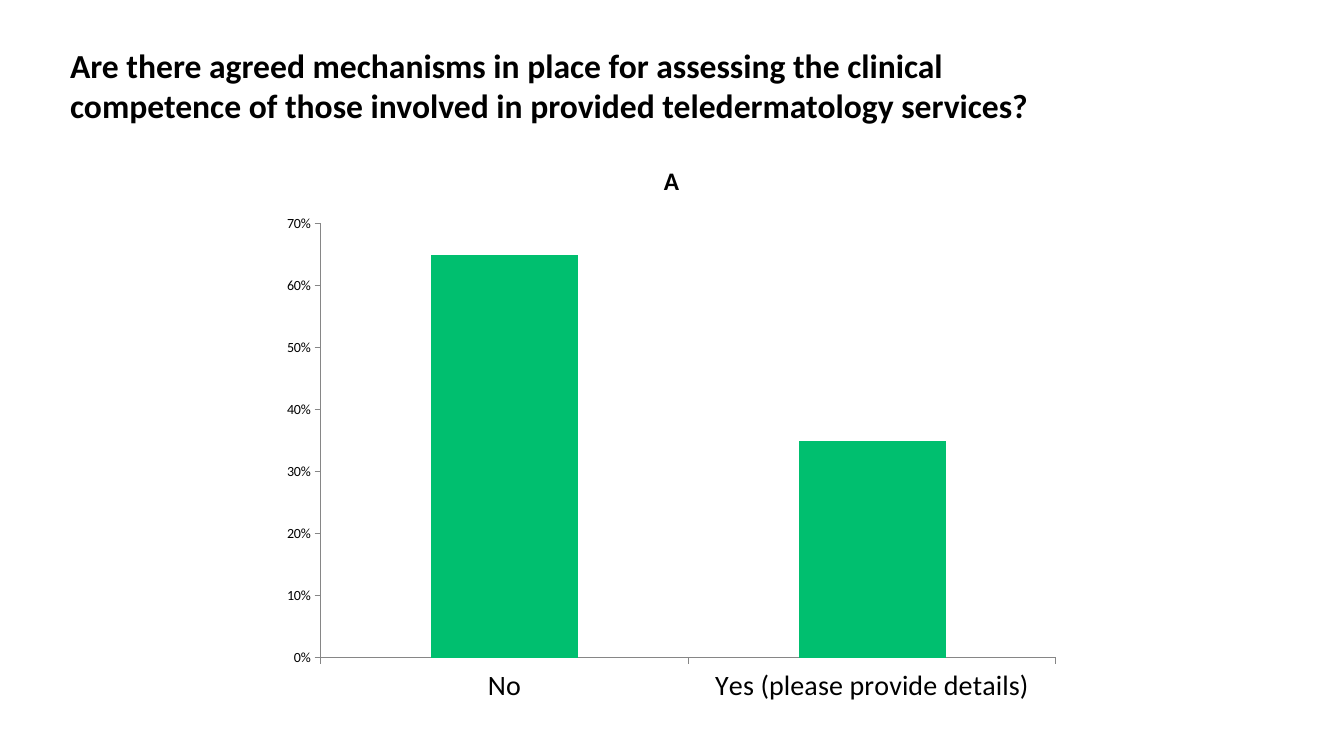
from dataclasses import dataclass

from pptx import Presentation
from pptx.chart.data import CategoryChartData
from pptx.dml.color import RGBColor
from pptx.enum.chart import XL_CHART_TYPE, XL_TICK_MARK
from pptx.enum.text import MSO_ANCHOR, MSO_AUTO_SIZE, PP_ALIGN
from pptx.util import Emu, Pt

COLUMNS = XL_CHART_TYPE.COLUMN_CLUSTERED
TICK_OUT, TICK_NONE = XL_TICK_MARK.OUTSIDE, XL_TICK_MARK.NONE
TOP, LEFT, FIXED = MSO_ANCHOR.TOP, PP_ALIGN.LEFT, MSO_AUTO_SIZE.NONE

EMU_PER_PX = 914400 / 100.8
TITLE_ONLY = 5
FONT = "Calibri"
COLORS = {"text": "000000", "bar": "00BF6F", "axis": "868686"}
QUESTION = (
    "Are there agreed mechanisms in place for assessing the clinical "
    "competence of those involved in provided teledermatology services?"
)


@dataclass(frozen=True)
class Area:
    left: int
    top: int
    width: int
    height: int

    def emu(self) -> tuple[Emu, ...]:
        return tuple(px(side) for side in (self.left, self.top, self.width, self.height))


@dataclass(frozen=True)
class Answer:
    label: str
    share: float


TITLE_AREA = Area(60, 40, 1063, 132)
CHART_AREA = Area(271, 142, 801, 572)
ANSWERS = [Answer("No", 0.65), Answer("Yes (please provide details)", 0.35)]


def px(length: int) -> Emu:
    return Emu(round(length * EMU_PER_PX))


def color(name: str) -> RGBColor:
    return RGBColor.from_string(COLORS[name])


def format_font(font, size: int, bold: bool = False) -> None:
    font.name = FONT
    font.size = Pt(size)
    font.bold = bold
    font.color.rgb = color("text")


def write_text(frame, text: str, *, size: int, bold: bool = False, align=None) -> None:
    para = frame.paragraphs[0]
    para.alignment = align
    span = para.add_run()
    span.text = text
    format_font(span.font, size, bold)


def add_question(page) -> None:
    box = page.shapes.title
    box.left, box.top, box.width, box.height = TITLE_AREA.emu()
    frame = box.text_frame
    frame.word_wrap = True
    frame.auto_size = FIXED
    frame.vertical_anchor = TOP
    write_text(frame, QUESTION, size=24, bold=True, align=LEFT)


def format_axis(axis, size: int) -> None:
    axis.has_major_gridlines = False
    axis.major_tick_mark = TICK_OUT
    axis.minor_tick_mark = TICK_NONE
    axis.format.line.color.rgb = color("axis")
    axis.format.line.width = Pt(0.75)
    format_font(axis.tick_labels.font, size)


def add_answer_chart(page) -> None:
    data = CategoryChartData(number_format="0%")
    data.categories = [answer.label for answer in ANSWERS]
    data.add_series("Series 1", [answer.share for answer in ANSWERS])
    chart = page.shapes.add_chart(COLUMNS, *CHART_AREA.emu(), data).chart
    format_font(chart.font, 10)
    chart.has_legend = False
    chart.has_title = True
    chart.chart_title.include_in_layout = False
    write_text(chart.chart_title.text_frame, "A", size=18, bold=True)

    format_axis(chart.category_axis, 20)
    shares = chart.value_axis
    format_axis(shares, 10)
    shares.minimum_scale, shares.maximum_scale, shares.major_unit = 0, 0.7, 0.1
    shares.tick_labels.number_format = "0%"
    shares.tick_labels.number_format_is_linked = False

    plot = chart.plots[0]
    plot.gap_width = 150
    plot.vary_by_categories = False
    bars = plot.series[0]
    bars.invert_if_negative = False
    bars.format.fill.solid()
    bars.format.fill.fore_color.rgb = color("bar")


def main() -> None:
    deck = Presentation()
    deck.slide_width, deck.slide_height = px(1344), px(756)
    page = deck.slides.add_slide(deck.slide_layouts[TITLE_ONLY])
    add_question(page)
    add_answer_chart(page)
    deck.save("out.pptx")


if __name__ == "__main__":
    main()
